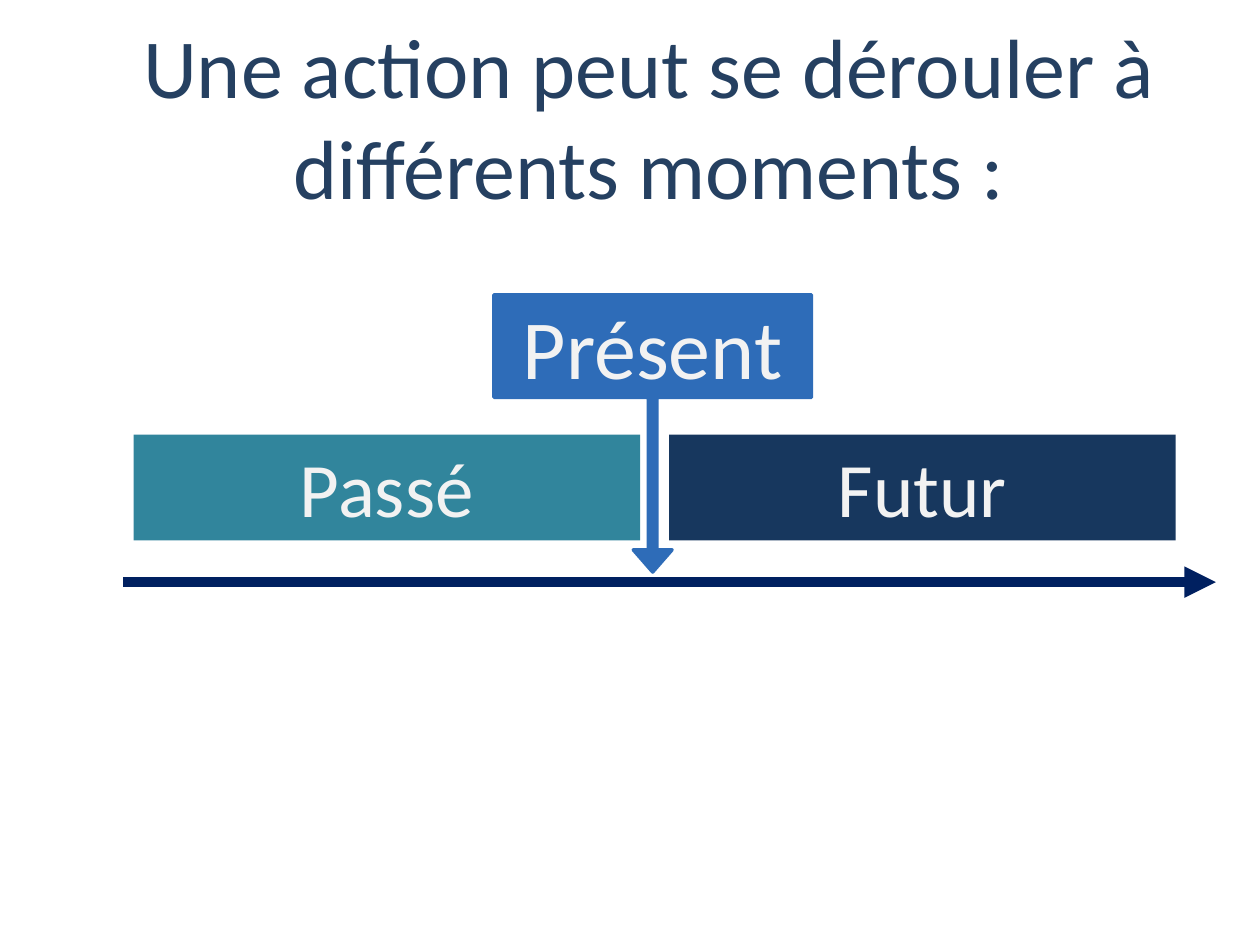
from dataclasses import dataclass

from lxml.etree import SubElement
from pptx import Presentation
from pptx.dml.color import RGBColor
from pptx.enum.shapes import MSO_CONNECTOR as Connector, MSO_SHAPE as Shape
from pptx.enum.text import MSO_ANCHOR as Anchor, PP_ALIGN as Align
from pptx.oxml.ns import qn
from pptx.util import Inches, Pt


@dataclass(frozen=True)
class Theme:
    font: str = "Calibri"
    title: str = "254061"
    label: str = "F2F2F2"
    axis: str = "002060"
    past: str = "31859C"
    present: str = "2E6CB8"
    future: str = "17375E"
    large: int = 48
    medium: int = 44


class TimelinePage:
    def __init__(self, deck, theme):
        self.theme = theme
        self.page = deck.slides.add_slide(deck.slide_layouts[5])

    def set_text(self, box, text, size, color, anchor):
        frame = box.text_frame
        frame.text = text
        frame.word_wrap = True
        frame.vertical_anchor = anchor
        para = frame.paragraphs[0]
        para.alignment = Align.CENTER
        font = para.runs[0].font
        font.name = self.theme.font
        font.size = Pt(size)
        font.color.rgb = RGBColor.from_string(color)

    def title(self, text, left, top, width, height):
        box = self.page.shapes.title
        box.left, box.top = Inches(left), Inches(top)
        box.width, box.height = Inches(width), Inches(height)
        self.set_text(box, text, self.theme.large, self.theme.title, Anchor.MIDDLE)

    def arrow(self, left, right, y, color, weight):
        arrow = self.page.shapes.add_connector(
            Connector.STRAIGHT, Inches(left), Inches(y), Inches(right), Inches(y))
        arrow.line.color.rgb = RGBColor.from_string(color)
        arrow.line.width = Pt(weight)
        properties = arrow.element.spPr
        SubElement(properties.find(qn("a:ln")), qn("a:tailEnd"), type="triangle")
        SubElement(properties, qn("a:effectLst"))

    def block(self, kind, text, area, color, size, anchor=Anchor.TOP):
        box = self.page.shapes.add_shape(kind, *map(Inches, area))
        box.shadow.inherit = False
        box.fill.solid()
        box.fill.fore_color.rgb = RGBColor.from_string(color)
        box.line.fill.background()
        self.set_text(box, text, size, self.theme.label, anchor)
        return box

    def callout(self, text, area, color, adjustments):
        box = self.block(Shape.DOWN_ARROW_CALLOUT, text, area, color,
                         self.theme.large, Anchor.MIDDLE)
        box.line.color.rgb = RGBColor.from_string(color)
        box.line.width = Pt(2)
        for index, value in enumerate(adjustments):
            box.adjustments[index] = value


def main():
    deck = Presentation()
    deck.slide_width, deck.slide_height = Inches(10), Inches(7.5)
    theme = Theme()
    timeline = TimelinePage(deck, theme)
    timeline.title("Une action peut se dérouler à différents moments :",
                   0.65, 0.29, 9, 1.25)
    timeline.arrow(0.98, 9.65, 4.62, theme.axis, 6)
    timeline.callout("Présent", (3.92, 2.34, 2.52, 2.2), theme.present,
                     (0.03, 0.07, 0.08, 0.37))
    periods = (("Passé", theme.past), ("Futur", theme.future))
    left, width, gap = 1.06, 4.02, 0.23
    for index, (text, color) in enumerate(periods):
        area = (left + index * (width + gap), 3.45, width, 0.84)
        timeline.block(Shape.RECTANGLE, text, area, color, theme.medium)
    deck.save("out.pptx")


if __name__ == "__main__":
    main()
